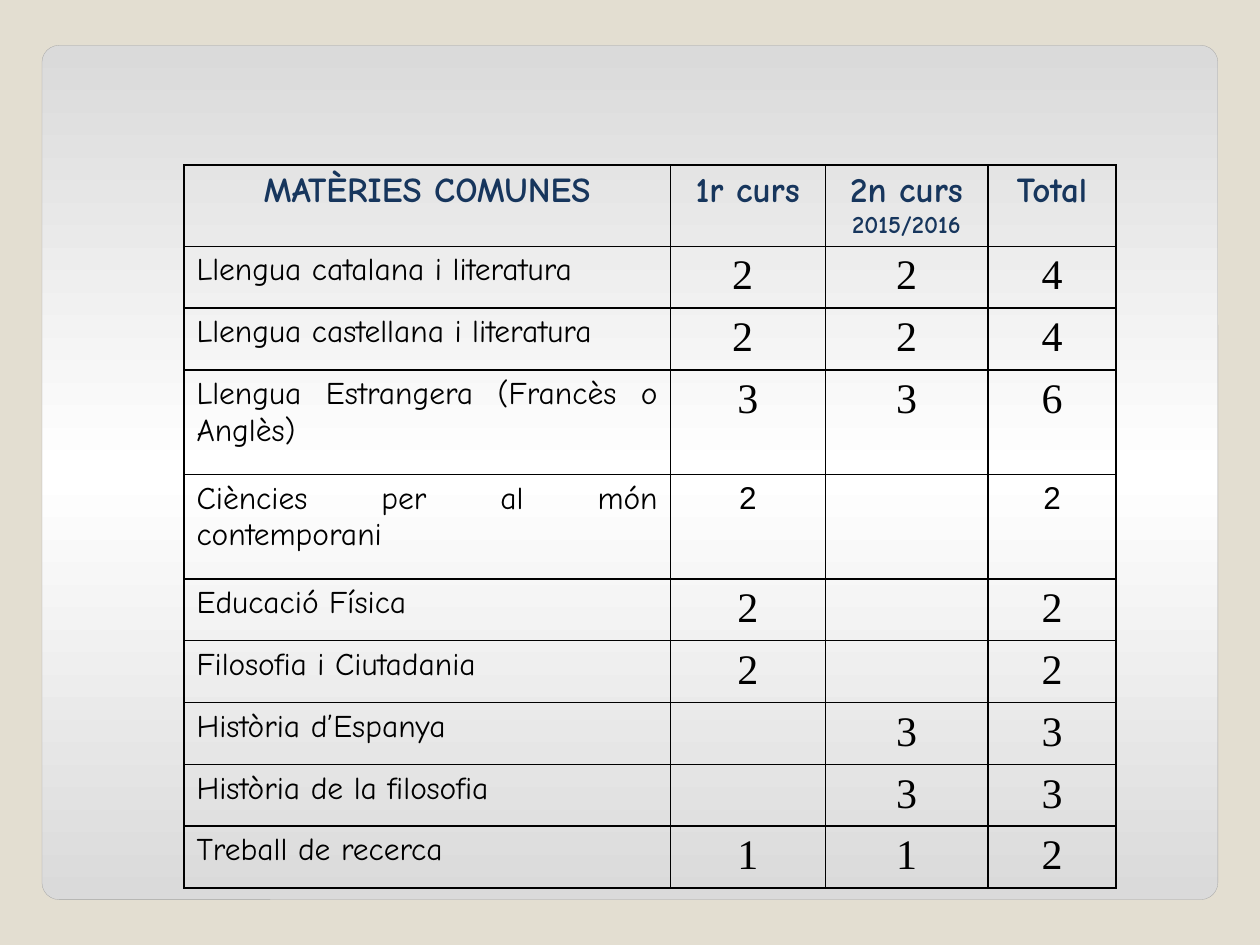
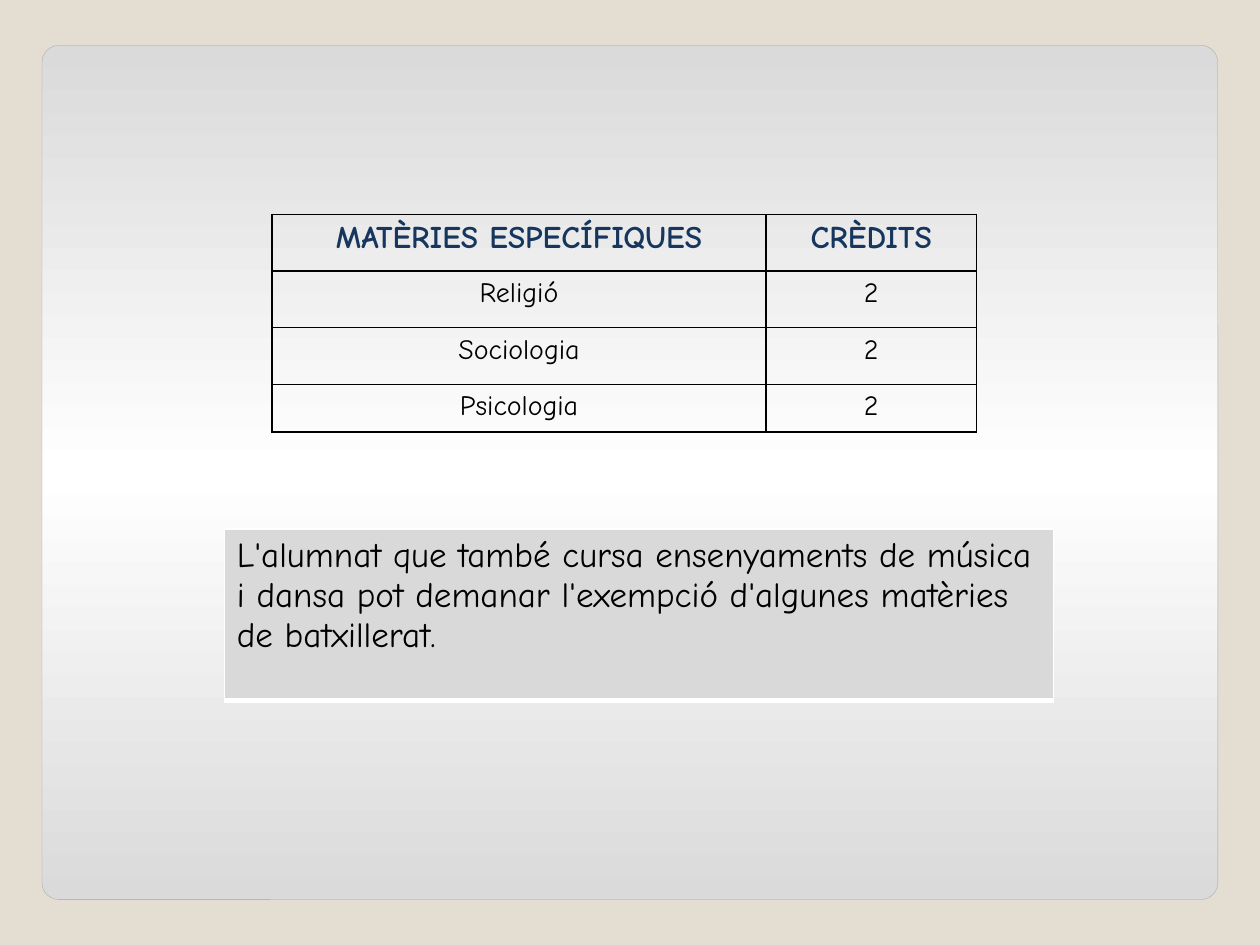
"""Build two slides on common and specific baccalaureate subjects."""
from copy import deepcopy
from dataclasses import dataclass, replace

from lxml.etree import SubElement
from pptx import Presentation
from pptx.dml.color import RGBColor
from pptx.enum.shapes import MSO_SHAPE as Preset
from pptx.enum.text import PP_ALIGN as Align
from pptx.oxml.ns import qn
from pptx.slide import Slide
from pptx.table import _Cell as Cell
from pptx.util import Inches, Pt

WIDTH, HEIGHT = Inches(10), Inches(7.5)
BACKDROP, PANEL_EDGE = "E3DED1", "A4A4A3"
PANEL_SHADES = ((0, "DADADA"), (0.5, "FFFFFF"), (1, "DADADA"))
BLACK, WHITE, NAVY, NOTE_GREY = "000000", "FFFFFF", "17365D", "D9D9D9"


@dataclass(frozen=True)
class Grid:
    """Place, columns and rows in percent of the slide's size."""
    left: float
    top: float
    columns: tuple[float, ...]
    rows: tuple[float, ...]


@dataclass(frozen=True)
class TextStyle:
    """Look of the text in a cell."""
    size: float
    align: Align = Align.CENTER
    font: str = "Comic Neue"
    colour: str = BLACK
    bold: bool = False


@dataclass(frozen=True)
class Entry:
    """Wording of a cell, with an optional smaller second line."""
    text: str
    style: TextStyle
    subtitle: str = ""


@dataclass(frozen=True)
class Frame:
    """Fill and border of the cells of a table."""
    border: str = BLACK
    bottom_width: float = 1
    fill: str = ""


HEADING = TextStyle(20, colour=NAVY, bold=True)
SMALL_HEADING = replace(HEADING, size=18)
SUBJECT = TextStyle(18, Align.JUSTIFY)
HOURS = TextStyle(24, font="Times New Roman")
SCIENCE_HOURS = TextStyle(18, font="Arial")
CREDIT = TextStyle(16)
NOTE = TextStyle(20, Align.LEFT)

COMMON_GRID = Grid(14.6, 17.47, (38.6, 12.3, 12.9, 10.2),
                   (6.8, *[6.55] * 2, *[11.05] * 2, *[6.55] * 5))
SPECIFIC_GRID = Grid(21.6, 22.67, (39.2, 16.7), (6, 6, 6, 5.07))
NOTE_GRID = Grid(17.8, 56, (65.8,), (18.13,))

COMMON_SUBJECTS = (
    ("Llengua catalana i literatura", "2 ", "2", "4"),
    ("Llengua castellana i literatura", "2 ", "2", "4"),
    ("Llengua Estrangera (Francès o Anglès)", "3", "3", "6"),
    ("Ciències per al món contemporani", "2", "", "2"),
    ("Educació Física", "2", "", "2"),
    ("Filosofia i Ciutadania", "2", "", "2"),
    ("Història d’Espanya", "", "3", "3"),
    ("Història de la filosofia", "", "3", "3"),
    ("Treball de recerca", "1", "1", "2"),
)
SPECIFIC_SUBJECTS = ("Religió", "Sociologia", "Psicologia")
EXEMPTION = ("L'alumnat que també cursa ensenyaments de música i dansa "
             "pot demanar l'exempció d'algunes matèries de batxillerat.")


def rgb(colour: str) -> RGBColor:
    """Turn a hex string into a colour."""
    return RGBColor.from_string(colour)


def across(percent: float) -> int:
    """Return a share of the slide's width."""
    return round(WIDTH * percent / 100)


def down(percent: float) -> int:
    """Return a share of the slide's height."""
    return round(HEIGHT * percent / 100)


def add_panel_slide(deck: Presentation) -> Slide:
    """Add a slide with the shared backdrop and shaded panel."""
    slide = deck.slides.add_slide(deck.slide_layouts[6])
    slide.background.fill.solid()
    slide.background.fill.fore_color.rgb = rgb(BACKDROP)
    panel = slide.shapes.add_shape(Preset.ROUNDED_RECTANGLE, across(3.33), down(4.8),
                                   across(93.33), down(90.4))
    panel.adjustments[0] = 0.02
    panel.shadow.inherit = False
    panel.fill.gradient()
    panel.fill.gradient_angle = 270
    stops = panel.fill._fill._gradFill.find(qn("a:gsLst"))
    stops.append(deepcopy(stops[0]))
    for stop, (position, shade) in zip(panel.fill.gradient_stops, PANEL_SHADES):
        stop.position = position
        stop.color.rgb = rgb(shade)
    panel.line.color.rgb = rgb(PANEL_EDGE)
    panel.line.width = Pt(0.17)
    return slide


def frame_cell(cell: Cell, frame: Frame) -> None:
    """Give a cell its borders and fill."""
    properties = cell._tc.get_or_add_tcPr()
    for side in "LRTB":
        width = frame.bottom_width if side == "B" else 1
        edge = SubElement(properties, qn(f"a:ln{side}"), w=str(Pt(width)))
        SubElement(SubElement(edge, qn("a:solidFill")), qn("a:srgbClr"), val=frame.border)
    if frame.fill:
        cell.fill.solid()
        cell.fill.fore_color.rgb = rgb(frame.fill)
    else:
        cell.fill.background()


def write_cell(cell: Cell, entry: Entry) -> None:
    """Write and format the text of a cell."""
    cell.text_frame.text = entry.text
    if entry.subtitle:
        cell.text_frame.add_paragraph().text = entry.subtitle
    for paragraph, size in zip(cell.text_frame.paragraphs, (entry.style.size, 14)):
        paragraph.alignment = entry.style.align
        for run in paragraph.runs:
            run.font.name = entry.style.font
            run.font.size = Pt(size)
            run.font.bold = entry.style.bold
            run.font.color.rgb = rgb(entry.style.colour)


def add_grid(slide: Slide, grid: Grid, entries: list[list[Entry]],
             frame: Frame = Frame()) -> None:
    """Draw a table of entries on the given grid."""
    table = slide.shapes.add_table(
        len(grid.rows), len(grid.columns), across(grid.left), down(grid.top),
        across(sum(grid.columns)), down(sum(grid.rows))).table
    table.first_row = table.horz_banding = False
    for column, width in zip(table.columns, grid.columns):
        column.width = across(width)
    for row, height, row_entries in zip(table.rows, grid.rows, entries):
        row.height = down(height)
        for cell, entry in zip(row.cells, row_entries):
            frame_cell(cell, frame)
            write_cell(cell, entry)


def build_common_subjects(deck: Presentation) -> None:
    """Build the slide of common subjects and their weekly hours."""
    entries = [[Entry("MATÈRIES COMUNES", HEADING), Entry("1r curs", HEADING),
                Entry("2n curs", HEADING, "2015/2016"), Entry("Total", HEADING)]]
    for subject, *hours in COMMON_SUBJECTS:
        style = SCIENCE_HOURS if subject.startswith("Ciències") else HOURS
        entries.append([Entry(subject, SUBJECT), *(Entry(hour, style) for hour in hours)])
    add_grid(add_panel_slide(deck), COMMON_GRID, entries)


def build_specific_subjects(deck: Presentation) -> None:
    """Build the slide of specific subjects and the exemption note."""
    slide = add_panel_slide(deck)
    entries = [[Entry("MATÈRIES ESPECÍFIQUES", SMALL_HEADING),
                Entry("CRÈDITS", SMALL_HEADING)]]
    entries += [[Entry(subject, CREDIT), Entry("2", CREDIT)] for subject in SPECIFIC_SUBJECTS]
    add_grid(slide, SPECIFIC_GRID, entries)
    add_grid(slide, NOTE_GRID, [[Entry(EXEMPTION, NOTE)]], Frame(WHITE, 3, NOTE_GREY))


def main() -> None:
    """Build and save the presentation."""
    deck = Presentation()
    deck.slide_width, deck.slide_height = WIDTH, HEIGHT
    build_common_subjects(deck)
    build_specific_subjects(deck)
    deck.save("out.pptx")


if __name__ == "__main__":
    main()
